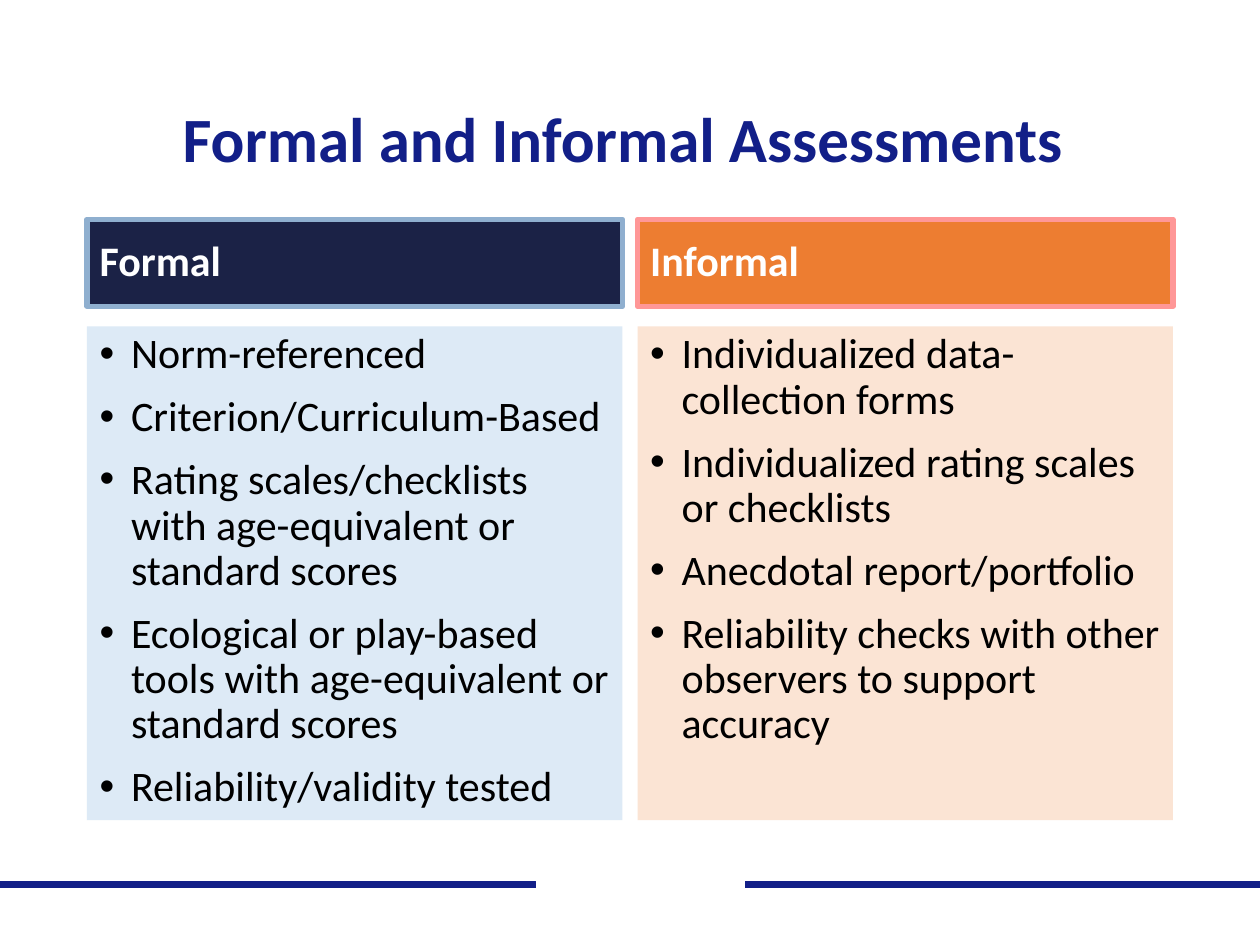
from lxml.etree import SubElement
from pptx import Presentation
from pptx.dml.color import RGBColor
from pptx.enum.shapes import MSO_CONNECTOR as Connector
from pptx.enum.text import MSO_ANCHOR as Anchor, MSO_AUTO_SIZE as AutoSize, PP_ALIGN as Align
from pptx.oxml.ns import qn
from pptx.util import Inches, Pt

COLORS = {
    "navy": "121F88", "white": "FFFFFF", "black": "000000",
    "formal": "1B2246", "formal_edge": "8FAFCF", "formal_pale": "DDEAF6",
    "informal": "ED7D31", "informal_edge": "FF9797", "informal_pale": "FBE4D4",
}
LEFT, COLUMN_WIDTH, COLUMN_STEP = 0.69, 4.25, 4.37
COLUMNS = [
    ("formal", "Formal", [
        "Norm-referenced",
        "Criterion/Curriculum-Based",
        "Rating scales/checklists with age-equivalent or standard scores",
        "Ecological or play-based tools with age-equivalent or standard scores",
        "Reliability/validity tested",
    ]),
    ("informal", "Informal", [
        "Individualized data-collection forms",
        "Individualized rating scales or checklists",
        "Anecdotal report/portfolio",
        "Reliability checks with other observers to support accuracy",
    ]),
]


def color(name):
    """Return the named colour."""
    return RGBColor.from_string(COLORS[name])


def place(box, left, top, width, height, anchor):
    """Move a placeholder and fix its text frame."""
    box.left, box.top = Inches(left), Inches(top)
    box.width, box.height = Inches(width), Inches(height)
    box.text_frame.auto_size = AutoSize.NONE
    box.text_frame.word_wrap = True
    box.text_frame.vertical_anchor = anchor


def write(para, text, size, ink, bold=False, align=Align.LEFT, before=0):
    """Add one formatted run to a paragraph."""
    para.alignment = align
    para.line_spacing = 0.9
    para.space_before = Pt(before)
    span = para.add_run()
    span.text = text
    span.font.name = "Calibri"
    span.font.size = Pt(size)
    span.font.bold = bold
    span.font.color.rgb = color(ink)


def add_bullet(para):
    """Give a paragraph a hanging round bullet."""
    props = para._p.get_or_add_pPr()
    props.set("marL", str(Inches(0.25)))
    props.set("indent", str(-Inches(0.25)))
    tint = SubElement(props, qn("a:buClr"))
    SubElement(tint, qn("a:srgbClr"), val=COLORS["black"])
    SubElement(props, qn("a:buFont"), typeface="Arial")
    SubElement(props, qn("a:buChar"), char="•")


def fill_title(box, text):
    """Write the slide title."""
    place(box, LEFT, 0.4, 8.62, 1.45, Anchor.MIDDLE)
    write(box.text_frame.paragraphs[0], text, 36, "navy", True, Align.CENTER)


def fill_heading(box, left, theme, text):
    """Write a column heading in a framed bar."""
    place(box, left, 1.74, COLUMN_WIDTH, 0.69, Anchor.MIDDLE)
    box.fill.solid()
    box.fill.fore_color.rgb = color(theme)
    box.line.color.rgb = color(f"{theme}_edge")
    box.line.width = Pt(3)
    write(box.text_frame.paragraphs[0], text, 24, "white", True)


def fill_list(box, left, theme, items):
    """Write a bulleted list on a pale panel."""
    place(box, left, 2.59, COLUMN_WIDTH, 3.92, Anchor.TOP)
    box.fill.solid()
    box.fill.fore_color.rgb = color(f"{theme}_pale")
    for index, item in enumerate(items):
        para = box.text_frame.add_paragraph() if index else box.text_frame.paragraphs[0]
        add_bullet(para)
        write(para, item, 24, "black", before=10 if index else 0)


def add_rule(page, start, end, ink):
    """Draw a horizontal footer rule."""
    y = Inches(7.02)
    rule = page.shapes.add_connector(Connector.STRAIGHT, Inches(start), y, Inches(end), y)
    rule.line.color.rgb = color(ink)
    rule.line.width = Pt(4.5)
    SubElement(rule._element.spPr, qn("a:effectLst"))


def main():
    """Build and save the slide."""
    deck = Presentation()
    deck.slide_width, deck.slide_height = Inches(10), Inches(7.5)
    page = deck.slides.add_slide(deck.slide_layouts.get_by_name("Comparison"))
    title, *boxes = page.placeholders
    add_rule(page, 0, 10, "navy")
    add_rule(page, 4.25, 5.91, "white")
    fill_title(title, "Formal and Informal Assessments ")
    for index, (theme, heading, items) in enumerate(COLUMNS):
        left = LEFT + index * COLUMN_STEP
        fill_heading(boxes[2 * index], left, theme, heading)
        fill_list(boxes[2 * index + 1], left, theme, items)
    deck.save("out.pptx")


if __name__ == "__main__":
    main()
